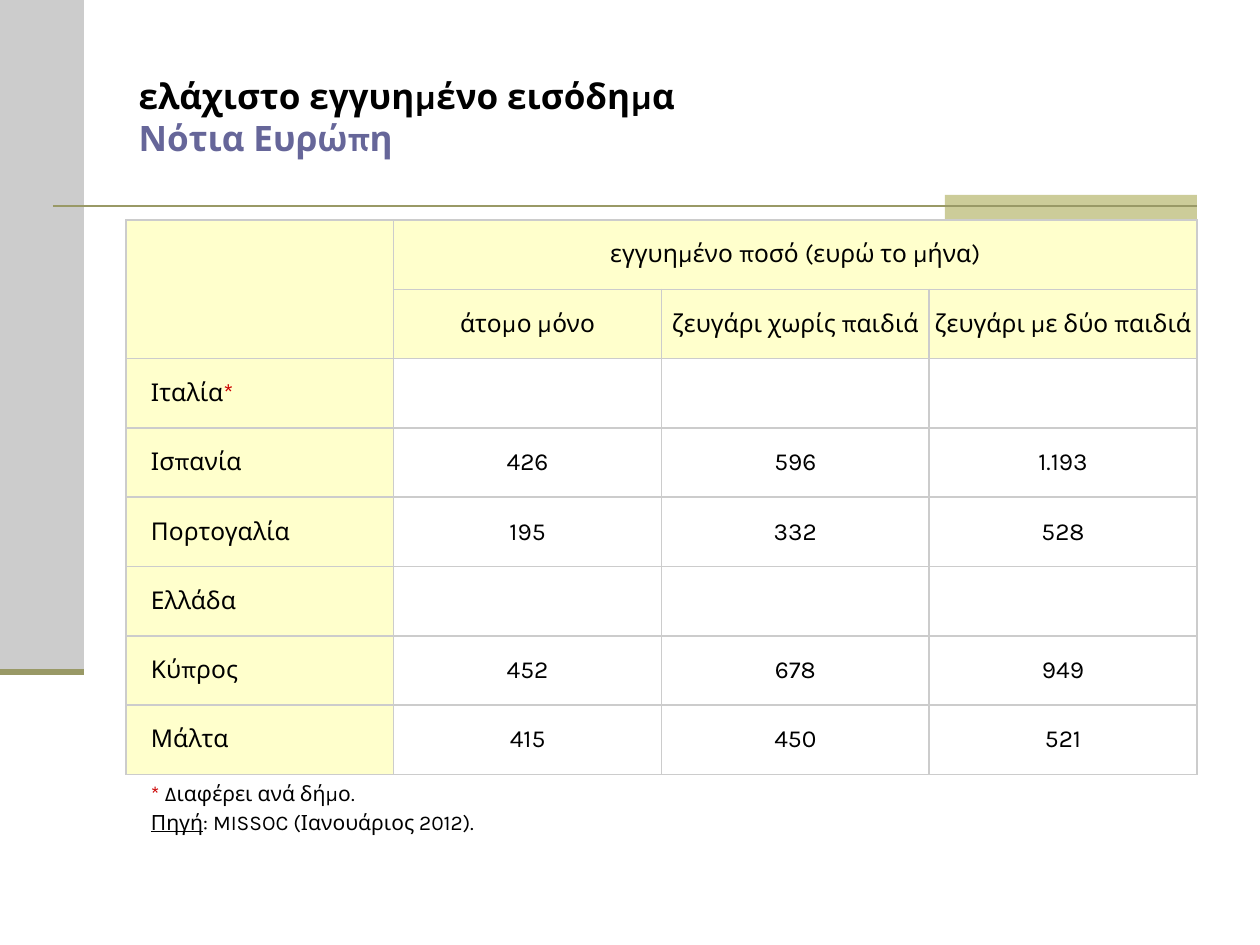
from pptx import Presentation
from pptx.dml.color import RGBColor
from pptx.enum.shapes import MSO_CONNECTOR, MSO_SHAPE
from pptx.enum.text import MSO_ANCHOR, MSO_AUTO_SIZE, PP_ALIGN
from pptx.oxml.ns import qn
from pptx.util import Emu, Pt
from lxml.etree import SubElement

EMU_PER_PX = 914400 / 126
FONT = "Karla"
BLACK, RED, PURPLE = "000000", "CC0000", "666699"
GREY, CREAM, KHAKI, OLIVE = "CCCCCC", "FFFFCC", "CCCC99", "999966"
COLUMN_HEADS = ["άτομο μόνο", "ζευγάρι χωρίς παιδιά", "ζευγάρι με δύο παιδιά"]
COUNTRIES = [
    ("Ιταλία", ["", "", ""]),
    ("Ισπανία", ["426", "596", "1.193"]),
    ("Πορτογαλία", ["195", "332", "528"]),
    ("Ελλάδα", ["", "", ""]),
    ("Κύπρος", ["452", "678", "949"]),
    ("Μάλτα", ["415", "450", "521"]),
]


def px(length):
    """Turn pixels into EMU."""
    return Emu(round(length * EMU_PER_PX))


def color(hex_code):
    """Turn a hex string into a colour."""
    return RGBColor.from_string(hex_code)


def format_span(span, size, hex_code=BLACK, bold=False):
    """Set the font of one run."""
    span.font.name = FONT
    span.font.size = Pt(size)
    span.font.bold = bold
    span.font.color.rgb = color(hex_code)


def add_bar(page, left, top, width, height, hex_code):
    """Add a plain filled rectangle."""
    bar = page.shapes.add_shape(
        MSO_SHAPE.RECTANGLE, px(left), px(top), px(width), px(height))
    bar.shadow.inherit = False
    bar.fill.solid()
    bar.fill.fore_color.rgb = color(hex_code)
    bar.line.fill.background()


def add_rule(page, left, right, y, weight):
    """Add a horizontal olive line without a shadow."""
    rule = page.shapes.add_connector(
        MSO_CONNECTOR.STRAIGHT, px(left), px(y), px(right), px(y))
    rule.line.color.rgb = color(OLIVE)
    rule.line.width = Pt(weight)
    SubElement(rule._element.spPr, qn("a:effectLst"))


def set_title(page, first_line, second_line):
    """Place and format the two-line title."""
    title = page.shapes.title
    title.left, title.top, title.width, title.height = (
        px(126), px(38), px(1071), px(157))
    frame = title.text_frame
    frame.text = f"{first_line}\v{second_line}"
    frame.auto_size = MSO_AUTO_SIZE.NONE
    frame.vertical_anchor = MSO_ANCHOR.MIDDLE
    para = frame.paragraphs[0]
    para.alignment = PP_ALIGN.LEFT
    for span, hex_code in zip(para.runs, (BLACK, PURPLE)):
        format_span(span, 20, hex_code, True)


def set_borders(cell, visible_sides):
    """Draw grey borders on the named sides and clear the others."""
    properties = cell._tc.get_or_add_tcPr()
    for side in "LRTB":
        border = SubElement(properties, qn(f"a:ln{side}"), w=str(Pt(1)))
        if side in visible_sides:
            fill = SubElement(border, qn("a:solidFill"))
            SubElement(fill, qn("a:srgbClr"), val=GREY)
        else:
            SubElement(border, qn("a:noFill"))


def fill_cell(cell, lines, size=14, centered=False):
    """Write lines of (text, colour) spans into a cell."""
    cell.margin_left = px(0 if centered else 25)
    cell.margin_right = cell.margin_top = cell.margin_bottom = 0
    cell.vertical_anchor = MSO_ANCHOR.MIDDLE
    frame = cell.text_frame
    for index, spans in enumerate(lines):
        para = frame.add_paragraph() if index else frame.paragraphs[0]
        para.alignment = PP_ALIGN.CENTER if centered else PP_ALIGN.LEFT
        para.space_before = Pt(size * 0.2)
        for text, hex_code in spans:
            span = para.add_run()
            span.text = text
            format_span(span, size, hex_code)


def add_income_table(page):
    """Add the table of guaranteed incomes with its notes row."""
    row_count, column_count = len(COUNTRIES) + 3, len(COLUMN_HEADS) + 1
    notes_row = row_count - 1
    frame = page.shapes.add_table(
        row_count, column_count, px(126), px(220), px(1071), px(624))
    table = frame.table
    table.first_row = table.horz_banding = False
    for r in range(row_count):
        for c in range(column_count):
            cell = table.cell(r, c)
            set_borders(cell, "T" if r == notes_row else "LRTB")
            if r < 2 or (c == 0 and r < notes_row):
                cell.fill.solid()
                cell.fill.fore_color.rgb = color(CREAM)
            else:
                cell.fill.background()

    table.cell(0, 0).merge(table.cell(1, 0))
    table.cell(0, 1).merge(table.cell(0, column_count - 1))
    table.cell(notes_row, 0).merge(table.cell(notes_row, column_count - 1))

    fill_cell(table.cell(0, 1), [[("εγγυημένο ποσό (ευρώ το μήνα)", BLACK)]],
              centered=True)
    for c, head in enumerate(COLUMN_HEADS, 1):
        fill_cell(table.cell(1, c), [[(head, BLACK)]], centered=True)
    for r, (country, amounts) in enumerate(COUNTRIES, 2):
        star = [("*", RED)] if country == "Ιταλία" else []
        fill_cell(table.cell(r, 0), [[(country, BLACK)] + star])
        for c, amount in enumerate(amounts, 1):
            if amount:
                fill_cell(table.cell(r, c), [[(amount, BLACK)]], centered=True)

    notes = table.cell(notes_row, 0)
    fill_cell(notes, [
        [("*", RED), (" Διαφέρει ανά δήμο.", BLACK)],
        [("Πηγή", BLACK), (": MISSOC (Ιανουάριος 2012).", BLACK)],
    ], size=12)
    notes.text_frame.paragraphs[1].runs[0].font.underline = True


def main():
    """Build the slide and save it."""
    deck = Presentation()
    deck.slide_width, deck.slide_height = px(1260), px(945)
    page = deck.slides.add_slide(deck.slide_layouts[5])
    add_bar(page, 0, 0, 84, 672, GREY)
    add_bar(page, 945, 195, 252, 25, KHAKI)
    add_rule(page, 53, 1197, 206, 1.5)
    add_rule(page, 0, 84, 672, 3.5)
    set_title(page, "ελάχιστο εγγυημένο εισόδημα", "Νότια Ευρώπη")
    add_income_table(page)
    deck.save("out.pptx")


if __name__ == "__main__":
    main()
